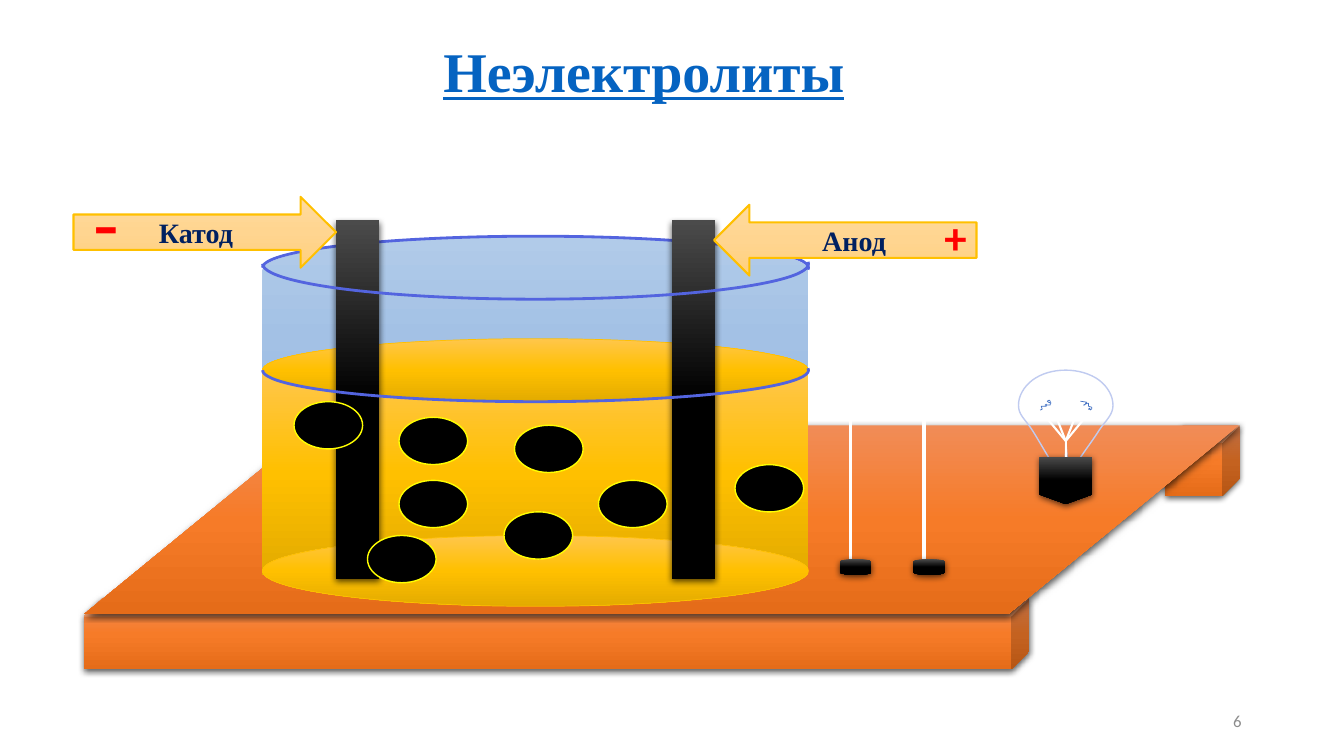
from copy import deepcopy

from lxml import etree
from pptx import Presentation
from pptx.dml.color import RGBColor
from pptx.enum.shapes import MSO_CONNECTOR, MSO_SHAPE
from pptx.enum.text import MSO_ANCHOR, PP_ALIGN
from pptx.oxml.ns import qn
from pptx.util import Pt

LINE, ELBOW = MSO_CONNECTOR.STRAIGHT, MSO_CONNECTOR.ELBOW
RECT, OVAL, ARC, CUBE = MSO_SHAPE.RECTANGLE, MSO_SHAPE.OVAL, MSO_SHAPE.ARC, MSO_SHAPE.CUBE
DISK, TABLE = MSO_SHAPE.FLOWCHART_MAGNETIC_DISK, MSO_SHAPE.FLOWCHART_DATA
SOCKET, DOT = MSO_SHAPE.FLOWCHART_OFFPAGE_CONNECTOR, MSO_SHAPE.FLOWCHART_CONNECTOR
LEFT, RIGHT = MSO_SHAPE.LEFT_ARROW, MSO_SHAPE.RIGHT_ARROW
MIDDLE, TOP = MSO_ANCHOR.MIDDLE, MSO_ANCHOR.TOP
CENTER, END = PP_ALIGN.CENTER, PP_ALIGN.RIGHT


def tones(*codes):
    return [RGBColor.from_string(code) for code in codes]


WHITE, BLACK, RED, GRAY = tones("FFFFFF", "000000", "FF0000", "8C8C8C")
NAVY, LINK, RIM, GLASS, COIL = tones("002060", "0563C1", "5364DF", "C0CBF0", "4472C4")
GOLD, YELLOW = tones("FFC000", "FFFF00")
WOOD = tones("F18C57", "F67B28", "E56C19")
WATER = tones("B1CBE9", "A3C1E5", "93B9E4")
LIQUID = tones("FFC64B", "FFC000", "E3AB00")
COAL = tones("4B4B4B", "000000", "000000")
LABEL = tones("FFDB9E", "FFD590", "FFD07C")
SERIF, SANS = "Times New Roman", "Calibri"

JAR_X, JAR_W = 187.5, 390
TITLE = "Неэлектролиты"
BOARD = [
    (CUBE, (832.5, 303.75, 53, 50.6)),
    (CUBE, (60, 427.5, 675, 50.6)),
    (TABLE, (60, 303.75, 825, 135)),
]
FILLING = [  # kind, top, height, outline
    (DISK, 315, 112.5, None),
    (RECT, 264.4, 146.25, None),
    (OVAL, 241.9, 45, (GOLD, 0.5)),
    (OVAL, 382.5, 50.6, (GOLD, 0.5)),
]
WIRE_X, WIRE_TOP, WIRE_END = 660, 101.25, 399.4
BENT = (495.2, 157.5), (607.5, 399.4)
RODS = [480, 240]
ARROWS = [(LEFT, 510, 146.25, "Анод"), (RIGHT, 52.5, 140.6, "Катод")]
SIGNS = [("-", 60, 146.25, 60, False), ("+", 667.5, 157.5, 32, True)]
DOTS = [(427.5, 343.1), (285, 298.1), (367.5, 303.75), (525, 331.9),
        (285, 343.1), (360, 365.6), (262.5, 382.5), (210, 286.9)]
BULB = [(727.5, 289.5),  # start, then two handles and an end for each curve
        (727.5, 283), (731, 276.5), (737.5, 271.5),
        (743.5, 267), (752, 264.4), (761.25, 264.4),
        (770, 264.4), (779, 267), (785, 271.5),
        (791.5, 276.5), (795, 283), (795, 289.5),
        (795, 296.5), (790, 300), (785, 307.5),
        (780.5, 315), (770, 328), (767, 335),
        (762.5, 341), (762, 349), (761.25, 345.5),
        (760.5, 342.5), (761.25, 315), (761.25, 315),
        (761.25, 315), (764.5, 343.5), (760.5, 342.5),
        (756.5, 341), (743, 316), (737.5, 307.5),
        (732, 299), (727.5, 296.5), (727.5, 289.5)]
HUB = (761.25, 315)
TIPS = [(750, 286.6), (772.5, 286.6), (742.5, 292.3), (780, 292.3)]
COILS = [
    [(779, 293), (778.3, 291.6), (777.6, 292.3), (779.8, 292.3), (779.8, 290.9),
     (777.6, 290.2), (777.6, 288), (776.9, 288), (774, 289.4), (774.7, 289.4),
     (776.2, 287.3), (771.8, 286.6)],
    [(743, 293), (744.5, 292.3), (743.8, 290.2), (747.4, 290.2), (747.4, 288.7),
     (746.6, 289.4), (750.2, 289.4), (750.2, 286.6), (749.5, 285.8),
     (748.1, 286.6), (748.8, 287.3), (751, 288)],
]

deck = Presentation()
deck.slide_width, deck.slide_height = Pt(960), Pt(540)
slide = deck.slides.add_slide(deck.slide_layouts[6])
shapes = slide.shapes


def paint(shape, fill, line=None, shade=False):
    """Set fill (None, one colour or three stops), outline and shadow."""
    if fill is None:
        shape.fill.background()
    elif isinstance(fill, list):
        shape.fill.gradient()
        shape.fill.gradient_angle = 270
        stops = shape._element.spPr.find(".//" + qn("a:gsLst"))
        stops.append(deepcopy(stops[0]))
        for i, stop in enumerate(shape.fill.gradient_stops):
            stop.color.rgb, stop.position = fill[i], i / 2
    else:
        shape.fill.solid()
        shape.fill.fore_color.rgb = fill
    if line:
        shape.line.color.rgb, shape.line.width = line[0], Pt(line[1])
    else:
        shape.line.fill.background()
    shape.shadow.inherit = False
    if shade:
        effects = shape._element.spPr.find(qn("a:effectLst"))
        cast = etree.SubElement(effects, qn("a:outerShdw"), blurRad=str(Pt(4.5)),
                                dist=str(Pt(1.5)), dir="5400000", rotWithShape="0")
        tint = etree.SubElement(cast, qn("a:srgbClr"), val="000000")
        etree.SubElement(tint, qn("a:alpha"), val="63000")


def draw(kind, box, fill, line=None, shade=False):
    shape = shapes.add_shape(kind, *map(Pt, box))
    paint(shape, fill, line, shade)
    return shape


def write(text, box=None, shape=None, size=20, font=SERIF, color=NAVY, bold=False,
          under=False, align=CENTER, anchor=MIDDLE, right=7.2):
    shape = shape or shapes.add_textbox(*map(Pt, box))
    frame = shape.text_frame
    frame.word_wrap, frame.vertical_anchor = True, anchor
    frame.margin_right = Pt(right)
    para = frame.paragraphs[0]
    para.alignment = align
    run = para.add_run()
    run.text = text
    face = run.font
    face.name, face.size, face.bold, face.underline = font, Pt(size), bold, under
    face.color.rgb = color


def wire(start, end, width, kind=LINE):
    link = shapes.add_connector(kind, *map(Pt, start + end))
    link.line.color.rgb, link.line.width = WHITE, Pt(width)
    etree.SubElement(link._element.spPr, qn("a:effectLst"))
    return link


def bend(start, end):
    """Draw a wire that rises from start, runs across and drops to end."""
    (ax, ay), (bx, by) = start, end
    x, y, dx, dy = (ax + bx) / 2, (ay + by) / 2, (bx - ax) / 2, (by - ay) / 2
    props = wire((x + dy, y - dx), (x - dy, y + dx), 2.25, ELBOW)._element.spPr
    props.find(qn("a:xfrm")).set("rot", "16200000")
    guides = props.find(".//" + qn("a:avLst"))
    etree.SubElement(guides, qn("a:gd"), name="adj1", fmla="val -7400")


def rim(top, high, flip=False):
    arc = draw(ARC, (JAR_X, top, JAR_W, high), None, (RIM, 2))
    arc.adjustments[0], arc.adjustments[1] = 107.75, 0
    arc.rotation = 180
    if flip:
        arc._element.spPr.find(qn("a:xfrm")).set("flipV", "1")


def curve(nodes, steps=8):
    """Turn a chain of cubic curves into points."""
    points = [nodes[0]]
    for i in range(0, len(nodes) - 1, 3):
        for t in (k / steps for k in range(1, steps + 1)):
            parts = ((1 - t) ** 3, 3 * t * (1 - t) ** 2, 3 * t * t * (1 - t), t ** 3)
            points.append(tuple(sum(w * p[axis] for w, p in zip(parts, nodes[i:i + 4]))
                                for axis in (0, 1)))
    return points


def trace(points, line, close=False):
    spots = [(Pt(x), Pt(y)) for x, y in points]
    path = shapes.build_freeform(*spots[0])
    path.add_line_segments(spots[1:], close=close)
    paint(path.convert_to_shape(), None, line)


for kind, box in BOARD:
    draw(kind, box, WOOD, shade=True)
draw(DISK, (JAR_X, 168.75, JAR_W, 146.25), WATER)
wire((WIRE_X, WIRE_TOP), (WIRE_X, WIRE_END), 2.25)
bend(*BENT)
for x in (600, 652.5):
    draw(DISK, (x, WIRE_END, 22.5, 11.25), COAL, shade=True)
for kind, top, high, line in FILLING:
    draw(kind, (JAR_X, top, JAR_W, high), LIQUID, line)
rim(168.75, 45, flip=True)
for x in RODS:
    draw(RECT, (x, 157.5, 31, 255.9), COAL, shade=True)
rim(241.9, 45)
for kind, x, y, name in ARROWS:
    arrow = draw(kind, (x, y, 187.5, 50.6), LABEL, (GOLD, 1.5))
    write(name, shape=arrow, bold=True)
for sign, x, y, size, bold in SIGNS:
    write(sign, (x, y, 30, 22.5), size=size, font=SANS, color=RED, bold=bold)
rim(163.1, 50.6)

trace(curve(BULB), (GLASS, 1), close=True)
socket = draw(SOCKET, (742.5, 326.25, 37.5, 33.75), COAL, shade=True)
for tip in TIPS:
    wire(HUB, tip, 1.5)
for coil in COILS:
    trace(coil, (COIL, 0.5))
wire(HUB, (761.25, 326.25), 1.5).end_connect(socket, 0)

write("6", (678, 500.5, 216, 28.8), size=12, font=SANS, color=GRAY, align=END)
for x, y in DOTS:
    draw(DOT, (x, y, 49, 33.75), BLACK, (YELLOW, 1))
write(TITLE, (JAR_X, 22.5, 555, 55.4), size=40, color=LINK, bold=True, under=True,
      anchor=TOP, right=17.2)
deck.save("out.pptx")
